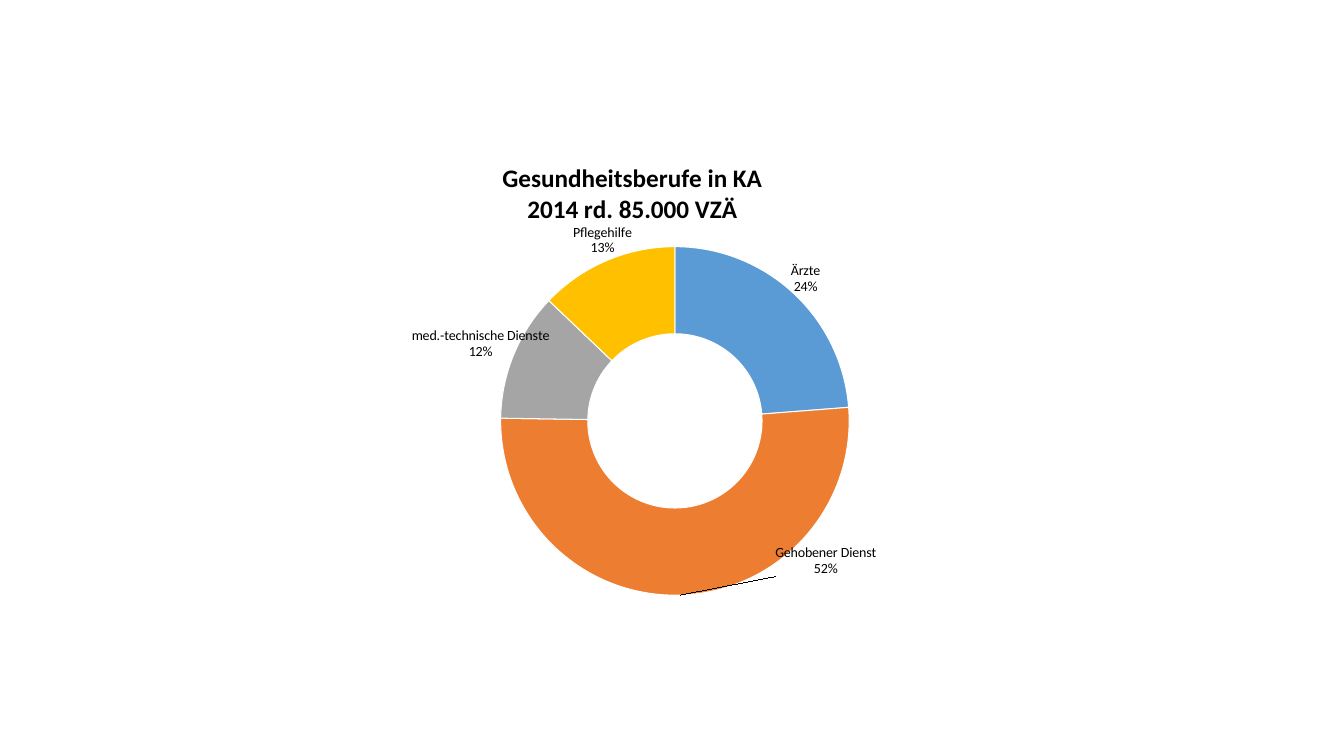
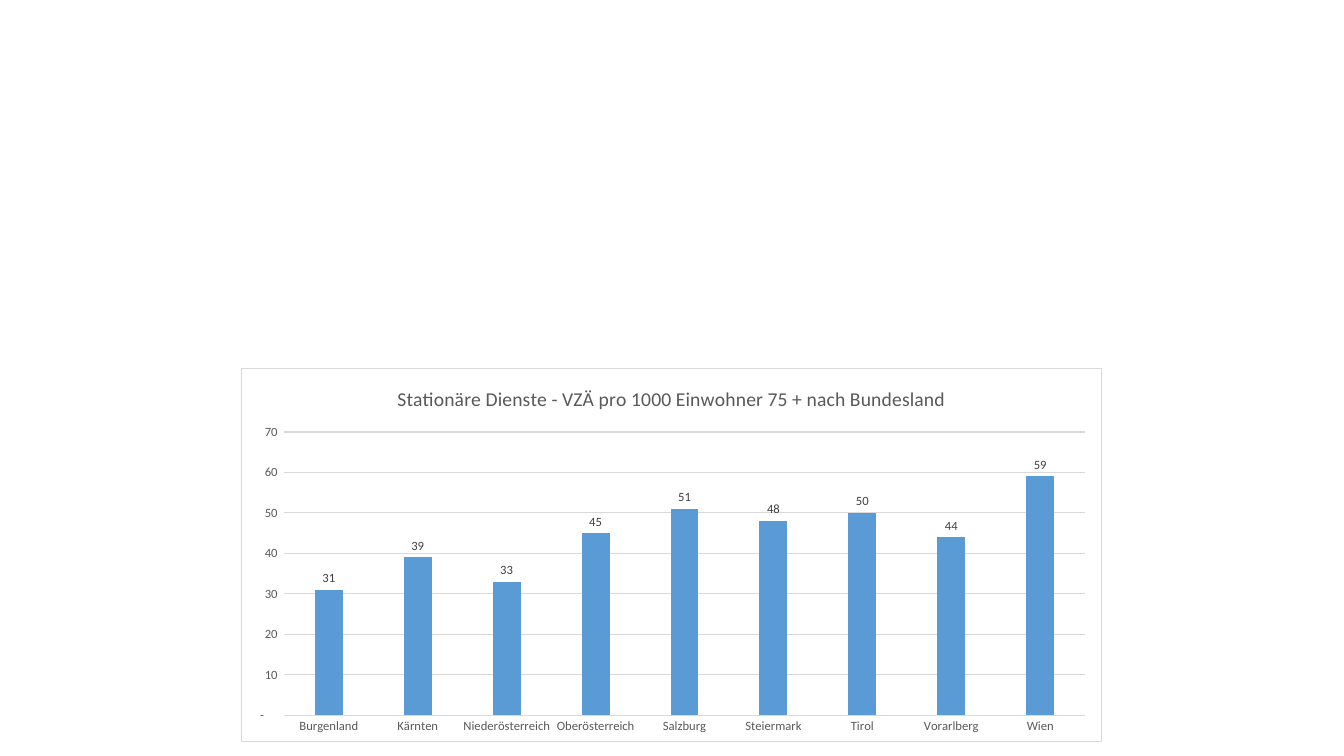
from pptx import Presentation
from pptx.chart.data import CategoryChartData
from pptx.dml.color import RGBColor
from pptx.enum.chart import XL_CHART_TYPE, XL_LABEL_POSITION, XL_TICK_MARK
from pptx.oxml import parse_xml
from pptx.oxml.ns import nsdecls, qn
from pptx.util import Pt

FONT = "Calibri"
BLACK, DARK, GREY, RULE, WHITE = "000000", "404040", "595959", "D9D9D9", "FFFFFF"
BLUE, ORANGE, SILVER, GOLD = "5B9BD5", "ED7D31", "A5A5A5", "FFC000"
ACCOUNTING = '_-* #,##0_-;\\-* #,##0_-;_-* "-"??_-;_-@_'


def style(font, size, color, bold=False):
    font.name, font.size, font.bold = FONT, Pt(size), bold
    font.color.rgb = RGBColor.from_string(color)


def set_layout(parent, index, modes="", **fractions):
    """Place a chart part by fractions of the chart area."""
    for old in parent.findall(qn("c:layout")):
        parent.remove(old)
    values = "".join(f'<c:{k} val="{v}"/>' for k, v in fractions.items())
    parent.insert(index, parse_xml(
        f'<c:layout {nsdecls("c")}><c:manualLayout>{modes}{values}'
        '</c:manualLayout></c:layout>'))


EDGE = '<c:xMode val="edge"/><c:yMode val="edge"/>'
INNER = '<c:layoutTarget val="inner"/>' + EDGE

prs = Presentation()
prs.slide_width, prs.slide_height = Pt(960), Pt(540)

# Contents of the two charts
charts = [
    dict(kind=XL_CHART_TYPE.DOUGHNUT, box=(293, 106.5, 374.5, 332),
         cats=["Ärzte", "Gehobener Dienst", "med.-technische Dienste", "Pflegehilfe"],
         vals=[24, 52, 12, 13],
         title=["Gesundheitsberufe in KA", "2014 rd. 85.000 VZÄ"],
         title_font=(18, BLACK, True),
         plot=dict(x=0.17, y=0.21, w=0.67, h=0.75)),
    dict(kind=XL_CHART_TYPE.COLUMN_CLUSTERED, box=(172, 263, 615.5, 267),
         cats=["Burgenland", "Kärnten", "Niederösterreich", "Oberösterreich",
               "Salzburg", "Steiermark", "Tirol", "Vorarlberg", "Wien"],
         vals=[31, 39, 33, 45, 51, 48, 50, 44, 59],
         title=["Stationäre Dienste - VZÄ pro 1000 Einwohner 75 + nach Bundesland"],
         title_font=(14, GREY),
         plot=dict(x=0.05, y=0.17, w=0.93, h=0.76)),
]

# One slide per chart, with title and plot area
built = []
for c in charts:
    s = prs.slides.add_slide(prs.slide_layouts[6])
    data = CategoryChartData()
    data.categories = c["cats"]
    data.add_series("Series 1", c["vals"])
    chart = s.shapes.add_chart(c["kind"], *map(Pt, c["box"]), data).chart
    chart.has_legend = False
    style(chart.font, 10, BLACK)
    chart.has_title = True
    tf = chart.chart_title.text_frame
    for i, line in enumerate(c["title"]):
        p = tf.paragraphs[0] if i == 0 else tf.add_paragraph()
        p.text = line
        style(p.font, *c["title_font"])
    set_layout(chart._chartSpace.chart.plotArea, 0, INNER, **c["plot"])
    built.append(chart)
doughnut, columns = built

# Doughnut: title position, segment colours and shifted labels
set_layout(doughnut.chart_title._element, 1, EDGE, x=0.17, y=0.02)
segments = [(BLUE, 0.08, -0.1), (ORANGE, 0.28, 0.02),
            (SILVER, -0.14, -0.06), (GOLD, -0.04, -0.13)]
doughnut.plots[0].vary_by_categories = True
for i, (color, dx, dy) in enumerate(segments):
    point = doughnut.plots[0].series[0].points[i]
    point.format.fill.solid()
    point.format.fill.fore_color.rgb = RGBColor.from_string(color)
    point.format.line.color.rgb = RGBColor.from_string(WHITE)
    point.format.line.width = Pt(0.75)
    style(point.data_label.font, 10, BLACK)
    label = doughnut.plots[0].series[0].data_labels._element.findall(qn("c:dLbl"))[i]
    set_layout(label, 1, x=dx, y=dy)
    label.insert(2, parse_xml(
        f'<c:numFmt {nsdecls("c")} formatCode="0&quot;%&quot;" sourceLinked="0"/>'))
    label.find(qn("c:showCatName")).set("val", "1")
    label.append(parse_xml(f'<c:separator {nsdecls("c")}>\n</c:separator>'))

# Columns: bars and value labels
plot = columns.plots[0]
plot.gap_width, plot.overlap, plot.vary_by_categories = 219, -27, False
fill = plot.series[0].format.fill
fill.solid()
fill.fore_color.rgb = RGBColor.from_string(BLUE)
labels = plot.series[0].data_labels
labels.show_value = True
labels.position = XL_LABEL_POSITION.OUTSIDE_END
labels.number_format, labels.number_format_is_linked = ACCOUNTING, False
style(labels.font, 9, DARK)

# Columns: axes and grid
cat_axis, val_axis = columns.category_axis, columns.value_axis
for axis in (cat_axis, val_axis):
    axis.major_tick_mark = axis.minor_tick_mark = XL_TICK_MARK.NONE
    style(axis.tick_labels.font, 9, GREY)
val_axis.minimum_scale, val_axis.maximum_scale, val_axis.major_unit = 0, 70, 10
val_axis.tick_labels.number_format = ACCOUNTING
val_axis.tick_labels.number_format_is_linked = False
val_axis.has_major_gridlines = True
for line in (cat_axis.format.line, val_axis.major_gridlines.format.line):
    line.color.rgb = RGBColor.from_string(RULE)
    line.width = Pt(0.75)
val_axis.format.line.fill.background()

# Columns: white chart area with a thin border
columns._chartSpace.find(qn("c:txPr")).addprevious(parse_xml(
    f'<c:spPr {nsdecls("c", "a")}>'
    f'<a:solidFill><a:srgbClr val="{WHITE}"/></a:solidFill>'
    f'<a:ln w="{Pt(0.75)}"><a:solidFill><a:srgbClr val="{RULE}"/></a:solidFill></a:ln>'
    '</c:spPr>'))

prs.save("out.pptx")
